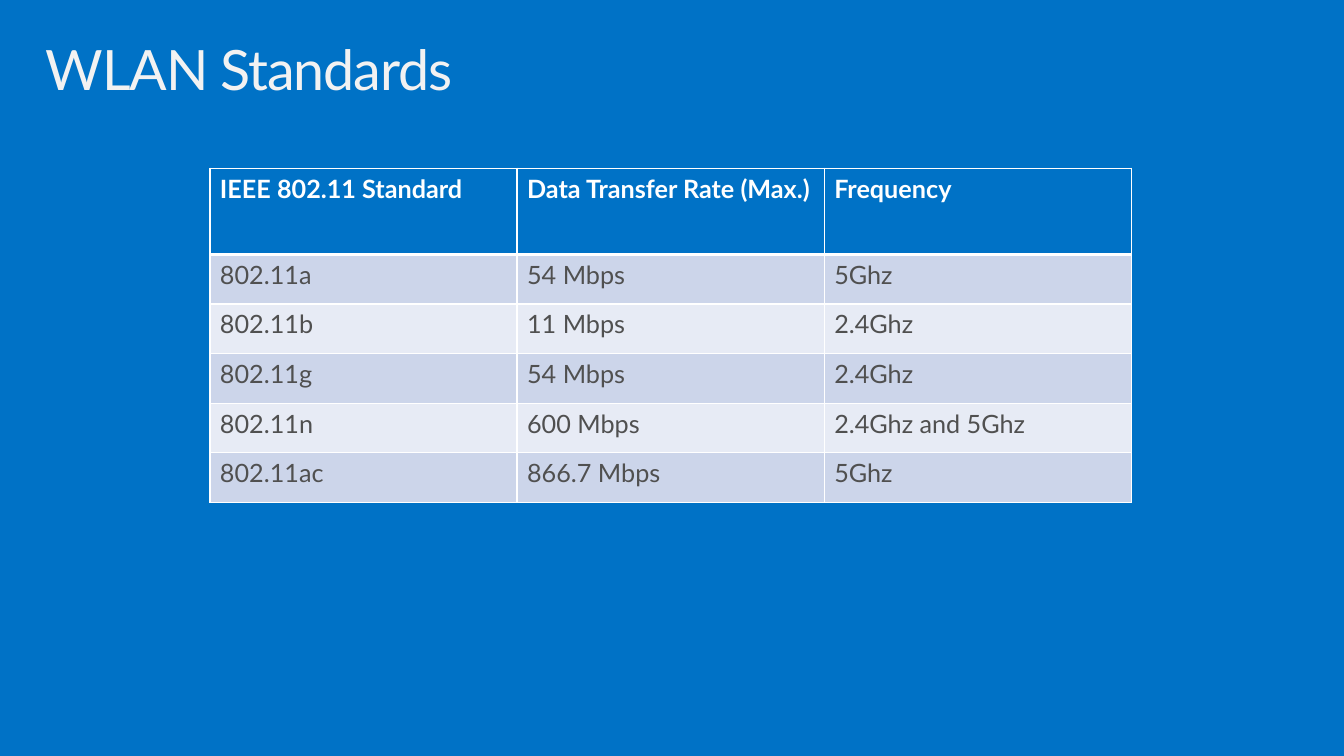
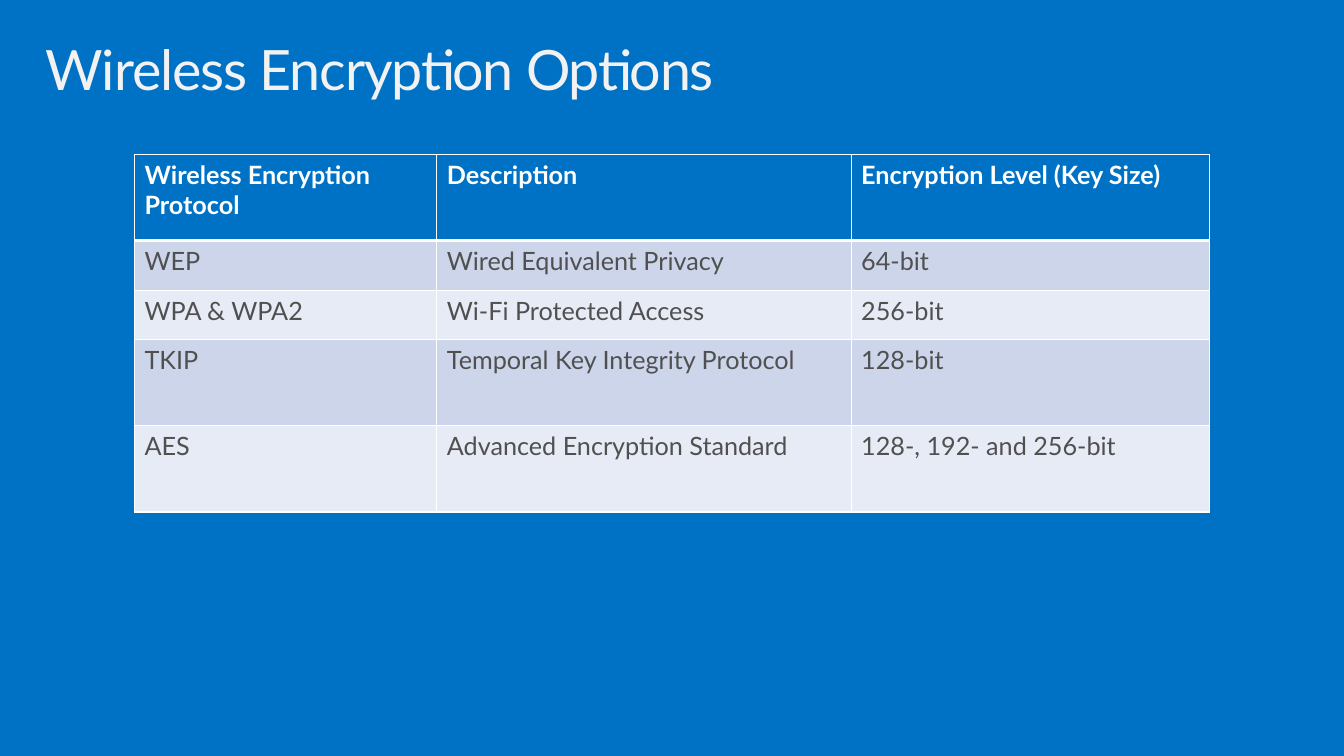
from lxml.etree import SubElement
from pptx import Presentation
from pptx.dml.color import RGBColor
from pptx.oxml.ns import qn
from pptx.util import Cm, Pt

BLUE = RGBColor(0x00, 0x72, 0xC6)
WHITE = RGBColor(0xFF, 0xFF, 0xFF)
TITLE_GREY = RGBColor(0xF2, 0xF2, 0xF2)
TEXT_GREY = RGBColor(0x50, 0x50, 0x50)
BANDS = [RGBColor(0xCC, 0xD5, 0xEA), RGBColor(0xE7, 0xEB, 0xF5)]

FONT = "Lato"
SHORT_ROW, TALL_ROW = 1.25, 2.17
THIN, THICK = Pt(1), Pt(3)

TOPICS = [
    {
        "title": "WLAN Standards",
        "left": 5.29,
        "top": 4.24,
        "widths": [7.74] * 3,
        "heights": [TALL_ROW] + [SHORT_ROW] * 5,
        "rows": [
            ["IEEE 802.11 Standard", "Data Transfer Rate (Max.)", "Frequency"],
            ["802.11a", "54 Mbps", "5Ghz"],
            ["802.11b", "11 Mbps", "2.4Ghz"],
            ["802.11g", "54 Mbps", "2.4Ghz"],
            ["802.11n", "600 Mbps", "2.4Ghz and 5Ghz"],
            ["802.11ac", "866.7 Mbps", "5Ghz"],
        ],
    },
    {
        "title": "Wireless Encryption Options",
        "left": 3.39,
        "top": 3.89,
        "widths": [7.62, 10.44, 9.04],
        "heights": [TALL_ROW, SHORT_ROW, SHORT_ROW, TALL_ROW, TALL_ROW],
        "rows": [
            ["Wireless Encryption Protocol", "Description", "Encryption Level (Key Size)"],
            ["WEP", "Wired Equivalent Privacy", "64-bit"],
            ["WPA & WPA2", "Wi-Fi Protected Access", "256-bit"],
            ["TKIP", "Temporal Key Integrity Protocol", "128-bit"],
            ["AES", "Advanced Encryption Standard", "128-, 192- and 256-bit"],
        ],
    },
]


def add_title(slide, wording):
    title = slide.shapes.add_textbox(Cm(0.74), Cm(0.81), Cm(32.28), Cm(2.49))
    frame = title.text_frame
    frame.word_wrap = True
    frame.margin_left = frame.margin_right = Cm(0.41)
    frame.margin_top = frame.margin_bottom = Cm(0.25)
    paragraph = frame.paragraphs[0]
    paragraph.line_spacing = 0.9
    paragraph.font.name = FONT
    paragraph.font.size = Pt(39.7)
    paragraph.font.color.rgb = TITLE_GREY
    run = paragraph.add_run()
    run.text = wording
    run._r.get_or_add_rPr().set("spc", "-80")


def add_borders(cell, top, bottom):
    """Draw white cell edges; call before the fill is set, as the schema orders them."""
    properties = cell._tc.get_or_add_tcPr()
    for edge, width in (("lnL", THIN), ("lnR", THIN), ("lnT", top), ("lnB", bottom)):
        line = SubElement(properties, qn(f"a:{edge}"), w=str(width))
        fill = SubElement(line, qn("a:solidFill"))
        SubElement(fill, qn("a:srgbClr"), val=str(WHITE))


prs = Presentation()
prs.slide_width, prs.slide_height = Cm(33.87), Cm(19.05)
blank = prs.slide_layouts[6]

background = prs.slide_master.background.fill
background.solid()
background.fore_color.rgb = BLUE

for topic in TOPICS:
    slide = prs.slides.add_slide(blank)
    add_title(slide, topic["title"])

    rows, widths, heights = topic["rows"], topic["widths"], topic["heights"]
    table = slide.shapes.add_table(
        len(rows), len(widths), Cm(topic["left"]), Cm(topic["top"]),
        Cm(sum(widths)), Cm(sum(heights)),
    ).table
    for column, width in zip(table.columns, widths):
        column.width = Cm(width)
    for row, height in zip(table.rows, heights):
        row.height = Cm(height)

    for r, wordings in enumerate(rows):
        is_header = r == 0
        for c, wording in enumerate(wordings):
            cell = table.cell(r, c)
            add_borders(cell, THICK if r == 1 else THIN, THICK if is_header else THIN)
            cell.fill.solid()
            cell.fill.fore_color.rgb = BLUE if is_header else BANDS[(r - 1) % 2]
            cell.text = wording
            font = cell.text_frame.paragraphs[0].font
            font.name = FONT
            font.size = Pt(18)
            font.bold = is_header
            font.color.rgb = WHITE if is_header else TEXT_GREY

prs.save("out.pptx")
